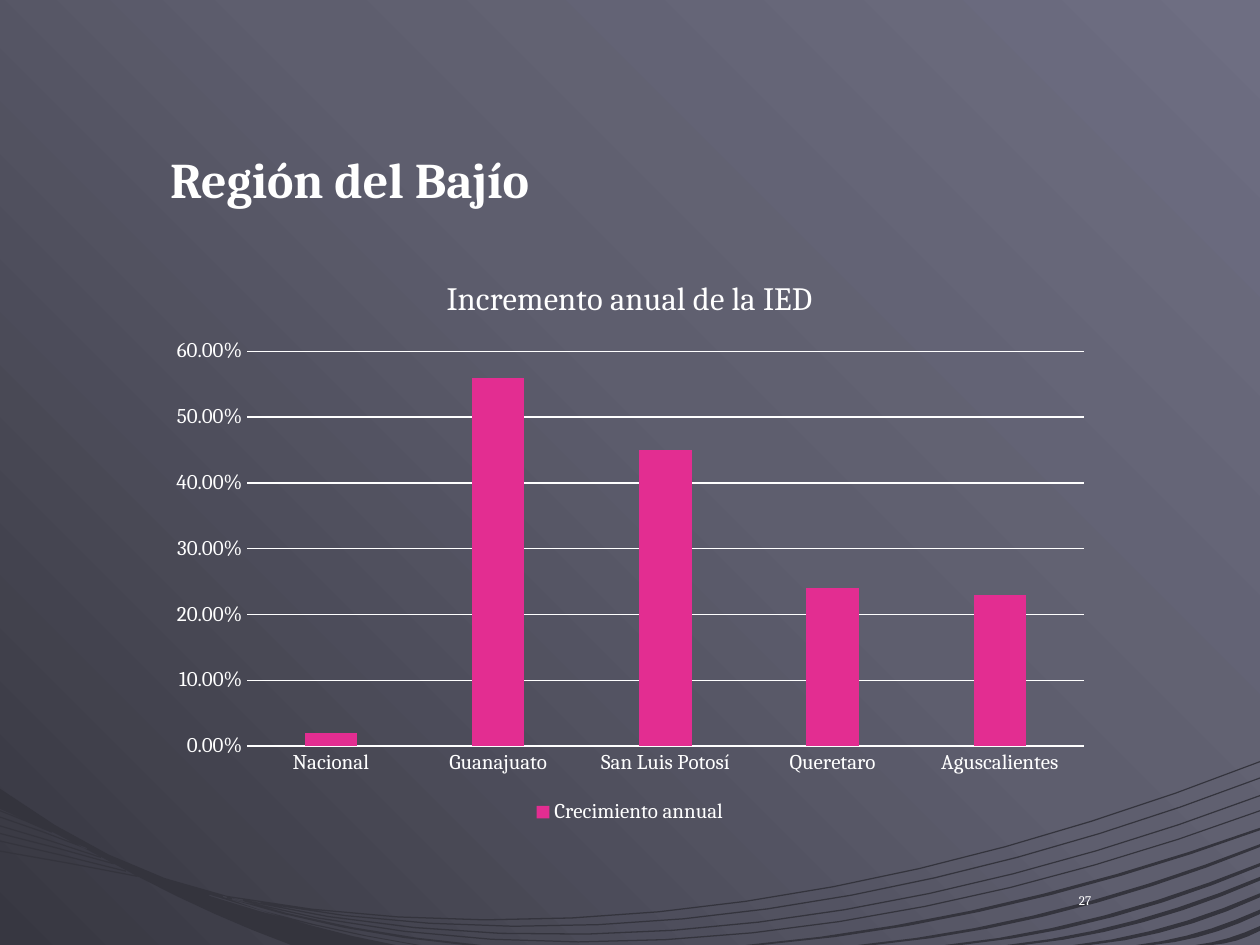
from copy import deepcopy
from pptx import Presentation
from pptx.chart.data import CategoryChartData as Data
from pptx.dml.color import RGBColor
from pptx.enum.chart import XL_CHART_TYPE as Kind, XL_LEGEND_POSITION as Spot, XL_TICK_MARK as Tick
from pptx.enum.text import MSO_ANCHOR as Anchor, PP_ALIGN as Align
from pptx.util import Inches, Pt

WIDE, HIGH = 10, 7.5
LEFT, SPAN = WIDE / 8, WIDE * 3 / 4
WHITE, PINK, DARK = "FFFFFF", "E32D91", "34343D"
SKY = [(0, "6E6E82"), (0.45, "5E5E6E"), (1, "373741")]
RATES = {
    "Nacional": 0.02,
    "Guanajuato": 0.56,
    "San Luis Potosí": 0.45,
    "Queretaro": 0.24,
    "Aguscalientes": 0.23,
}
LONG = [
    ((1.8, 7.11), (4.5, 7.6), (7.35, 7.08), (WIDE, 6.04)),
    ((2.07, 7.16), (4.73, 7.65), (7.49, 7.13), (WIDE, 6.17)),
    ((1.93, 7.14), (4.63, 7.75), (7.45, 7.27), (WIDE, 6.31)),
    ((1.84, 7.13), (4.56, 7.83), (7.42, 7.38), (WIDE, 6.43)),
]
SHORT = [(5.92, 6.57), (6.81, 6.7), (7.5, 6.85), (7.99, 6.96),
         (8.52, 7.09), (9.02, 7.22), (9.49, 7.35)]
FAN = [(6.43, 0.41, 6.6), (6.48, 0.69, 6.73), (6.55, 0.8, 6.8),
       (6.61, 0.9, 6.85), (6.67, 1, 6.91), (6.75, 1.09, 6.95)]


def tint(code):
    return RGBColor.from_string(code)


def style(font, size, **more):
    for key, val in {"size": Pt(size), "name": "Cambria", **more}.items():
        setattr(font, key, val)
    font.color.rgb = tint(WHITE)


def curve(a, b, c, d, steps=4):
    for i in range(steps + 1):
        t = i / steps
        u = 1 - t
        yield tuple(u**3 * p + 3 * u * u * t * q + 3 * u * t * t * r + t**3 * s
                    for p, q, r, s in zip(a, b, c, d))


def band(edge, start, end, steps=4):
    pts = list(curve(*edge, steps))
    back = []
    for i, (x, y) in enumerate(pts):
        t = i / steps
        back.append((x + start[0] * (1 - t) + end[0] * t,
                     min(HIGH, y + start[1] * (1 - t) + end[1] * t)))
    return pts + back[::-1]


def blob():
    top = list(curve((0, 6.26), (0.6, 6.68), (1.1, 6.95), (1.8, 7.11)))
    side = list(curve((1.8, 7.13), (2.2, 7.28), (2.7, 7.42), (3.14, HIGH)))
    base = list(curve((2.31, HIGH), (1.9, 7.35), (1.5, 7.17), (1.1, 6.96)))
    return top + side + base + [(0.8, 6.8), (0.41, 6.6), (0, 6.42)]


def waves(slide):
    thin = (0, 0.01)
    loops = [blob()]
    loops += [band(edge, thin, thin, 12) for edge in LONG]
    for i, (x, y) in enumerate(SHORT):
        run, drop = WIDE - x, HIGH - y
        edge = ((x, HIGH), (x + run * 0.34, HIGH - drop * 0.13),
                (x + run * 0.68, HIGH - drop * 0.5), (WIDE, y))
        loops.append(band(edge, (0.13, 0), (0, 0.02 + i * 0.003), 7 - i // 2))
    for y, x, low in FAN:
        edge = ((0, y), (x / 3, y + (low - y) * 0.3),
                (x * 2 / 3, y + (low - y) * 0.64), (x, low))
        loops.append(band(edge, thin, thin, 2))
    loops.append(band(((1.66, 7.1), (2.21, 7.28), (2.77, 7.41), (3.33, HIGH)),
                      thin, (-0.04, 0)))
    loops.append(band(((1.77, 7.11), (2.45, 7.31), (3.13, 7.44), (3.82, HIGH)),
                      thin, (-0.14, 0)))
    unit = 1000
    pen = None
    for loop in loops:
        pts = [(x * unit, y * unit) for x, y in loop]
        if pen is None:
            pen = slide.shapes.build_freeform(*pts[0], scale=Inches(1) / unit)
        else:
            pen.move_to(*pts[0])
        pen.add_line_segments(pts[1:], close=True)
    shape = pen.convert_to_shape()
    shape.shadow.inherit = False
    shape.fill.solid()
    shape.fill.fore_color.rgb = tint(DARK)
    shape.line.fill.background()
    slide.shapes._spTree.insert(2, shape._element)


def sky(slide):
    fill = slide.background.fill
    fill.gradient()
    first = slide._element.xpath(".//a:gs")[0]
    first.addnext(deepcopy(first))
    for stop, (spot, code) in zip(fill.gradient_stops, SKY):
        stop.position = spot
        stop.color.rgb = tint(code)
    fill.gradient_angle = 225


def write(shape, box, text, size, anchor, align, **more):
    for key, val in zip(("left", "top", "width", "height"), box):
        setattr(shape, key, Inches(val))
    frame = shape.text_frame
    frame.word_wrap = True
    frame.vertical_anchor = anchor
    para = frame.paragraphs[0]
    para.alignment = align
    run = para.add_run()
    run.text = text
    style(run.font, size, **more)
    return para


def bars(slide, box):
    data = Data(number_format="0.00%")
    data.categories = list(RATES)
    data.add_series("Crecimiento annual", list(RATES.values()))
    chart = slide.shapes.add_chart(
        Kind.COLUMN_CLUSTERED, *map(Inches, box), data).chart
    style(chart.font, 10)
    chart.has_title = True
    run = chart.chart_title.text_frame.paragraphs[0].add_run()
    run.text = "Incremento anual de la IED"
    style(run.font, 18.6, bold=False)
    chart.has_legend = True
    key = chart.legend
    key.position = Spot.BOTTOM
    key.include_in_layout = False
    style(key.font, 12)
    cat, val = chart.category_axis, chart.value_axis
    for axis in (cat, val):
        axis.major_tick_mark = axis.minor_tick_mark = Tick.NONE
        style(axis.tick_labels.font, 12)
    val.minimum_scale, val.maximum_scale, val.major_unit = 0, 0.6, 0.1
    val.tick_labels.number_format = "0.00%"
    val.tick_labels.number_format_is_linked = False
    val.format.line.fill.background()
    for line in (cat.format.line, val.major_gridlines.format.line):
        line.color.rgb = tint(WHITE)
        line.width = Pt(0.75)
    plot = chart.plots[0]
    plot.gap_width, plot.overlap, plot.vary_by_categories = 219, -27, False
    fill = plot.series[0].format.fill
    fill.solid()
    fill.fore_color.rgb = tint(PINK)


def main():
    deck = Presentation()
    deck.slide_width, deck.slide_height = Inches(WIDE), Inches(HIGH)
    slide = deck.slides.add_slide(deck.slide_layouts[5])
    sky(slide)
    waves(slide)
    head = write(slide.shapes.title, (LEFT, 0.44, SPAN, 1.27), "Región del Bajío",
                 28.5, Anchor.BOTTOM, Align.LEFT, bold=True)
    head.line_spacing = 0.9
    bars(slide, (LEFT, 2, SPAN, 4.58))
    page = slide.shapes.add_textbox(0, 0, 0, 0)
    write(page, (8.06, 7.01, 0.7, 0.27), "27", 7.5, Anchor.MIDDLE, Align.RIGHT)
    deck.save("out.pptx")


if __name__ == "__main__":
    main()
